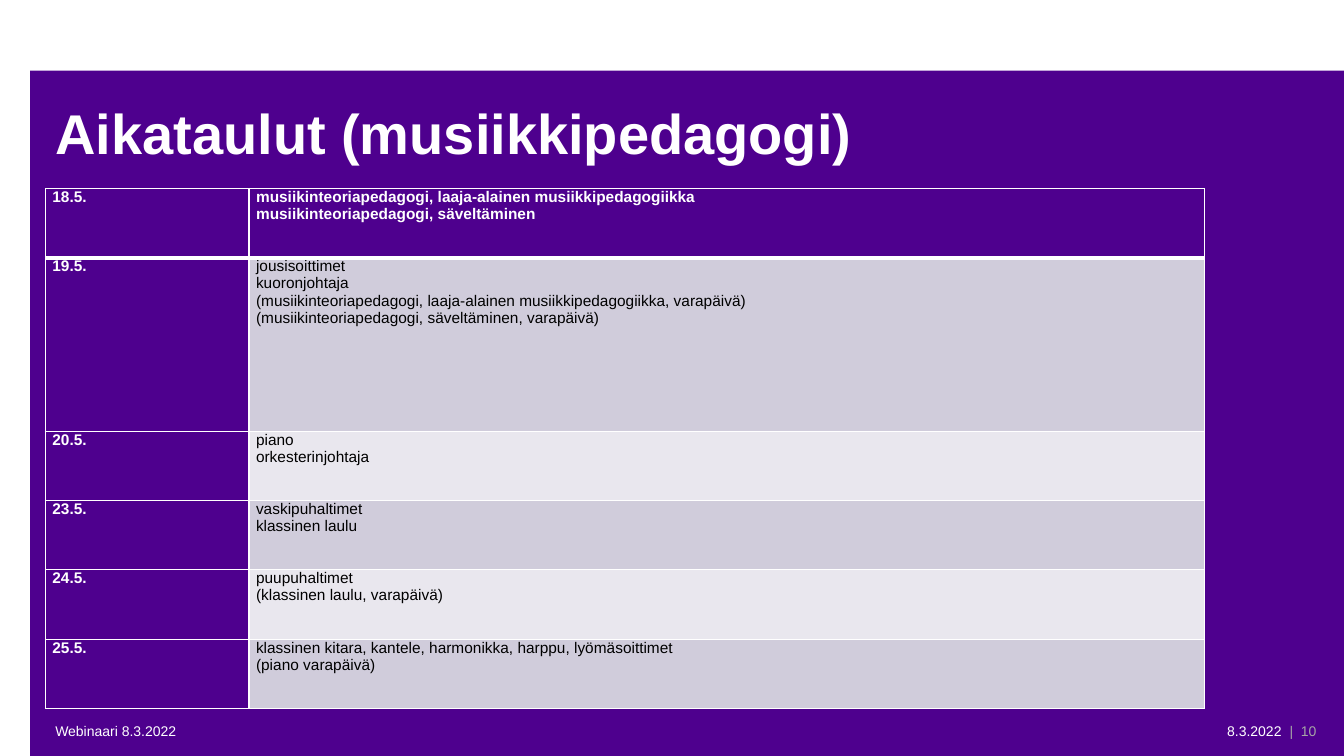
import pptx
import pptx.dml.color
import pptx.enum.shapes
import pptx.enum.text
import pptx.oxml
import pptx.oxml.ns
import pptx.util
from dataclasses import dataclass

# Content
TITLE = "Aikataulut (musiikkipedagogi)"
SCHEDULE = [
    ("18.5.", ["musiikinteoriapedagogi, laaja-alainen musiikkipedagogiikka",
               "musiikinteoriapedagogi, säveltäminen"]),
    ("19.5.", ["jousisoittimet", "kuoronjohtaja",
               "(musiikinteoriapedagogi, laaja-alainen musiikkipedagogiikka, varapäivä)",
               "(musiikinteoriapedagogi, säveltäminen, varapäivä)"]),
    ("20.5.", ["piano", "orkesterinjohtaja"]),
    ("23.5.", ["vaskipuhaltimet", "klassinen laulu"]),
    ("24.5.", ["puupuhaltimet", "(klassinen laulu, varapäivä)"]),
    ("25.5.", ["klassinen kitara, kantele, harmonikka, harppu, lyömäsoittimet",
               "(piano varapäivä)"]),
]
FOOTER, DATE, PAGE = "Webinaari 8.3.2022", "8.3.2022", "|  10"


@dataclass(frozen=True)
class Theme:
    font: str = "Arial"
    purple: str = "4E008E"
    white: str = "FFFFFF"
    black: str = "000000"
    gray: str = "A6A6A6"
    bands: tuple = ("E9E7EE", "D0CCDB")
    title_size: int = 40
    table_size: int = 11
    footer_size: int = 10
    thin_line: int = 1
    header_line: int = 3


THEME = Theme()
ALIGN = pptx.enum.text.PP_ALIGN
ANCHOR = pptx.enum.text.MSO_ANCHOR

# Layout, in inches
WIDTH, HEIGHT = 13.33, 7.5
PANEL_LEFT, PANEL_TOP = 0.3, 0.7
MARGIN, CONTENT_WIDTH = 0.45, 11.5
TABLE_TOP, TABLE_HEIGHT = 1.87, 5.16
DATE_COLUMN = 2.02
ROW_UNITS = [4, 10, 4, 4, 4, 4]
FOOTER_TOP, FOOTER_HEIGHT = 7.1, 0.28


def inches(*values):
    return [pptx.util.Inches(value) for value in values]


def color(value):
    return pptx.dml.color.RGBColor.from_string(value)


def write(frame, lines, size, ink=THEME.white, bold=False, align=ALIGN.LEFT,
          insets=(0.1, 0.05, 0.1, 0.05), line_spacing=None):
    """Fill a text frame with one paragraph per line."""
    (frame.margin_left, frame.margin_top,
     frame.margin_right, frame.margin_bottom) = inches(*insets)
    frame.word_wrap = True
    for index, line in enumerate(lines):
        paragraph = frame.add_paragraph() if index else frame.paragraphs[0]
        paragraph.text = line
        paragraph.alignment = align
        paragraph.line_spacing = line_spacing
        font = paragraph.font
        font.name, font.size, font.bold = THEME.font, pptx.util.Pt(size), bold
        font.color.rgb = color(ink)


def set_borders(cell, top, bottom):
    """Draw the four white cell borders, with widths in points."""
    properties = cell._tc.get_or_add_tcPr()
    widths = {"lnL": THEME.thin_line, "lnR": THEME.thin_line, "lnT": top, "lnB": bottom}
    for index, (side, width) in enumerate(widths.items()):
        properties.insert(index, pptx.oxml.parse_xml(
            f'<a:{side} {pptx.oxml.ns.nsdecls("a")} w="{pptx.util.Pt(width)}">'
            f'<a:solidFill><a:srgbClr val="{THEME.white}"/></a:solidFill></a:{side}>'))


def add_panel(slide):
    panel = slide.shapes.add_shape(
        pptx.enum.shapes.MSO_SHAPE.RECTANGLE,
        *inches(PANEL_LEFT, PANEL_TOP, WIDTH - PANEL_LEFT, HEIGHT - PANEL_TOP))
    panel.shadow.inherit = False
    panel.fill.solid()
    panel.fill.fore_color.rgb = color(THEME.purple)
    panel.line.fill.background()


def add_title(slide):
    title = slide.shapes.title
    slide.shapes._spTree.append(title._element)  # bring in front of the panel
    title.left, title.top, title.width, title.height = inches(MARGIN, 1, CONTENT_WIDTH, 0.71)
    write(title.text_frame, [TITLE], THEME.title_size, bold=True, line_spacing=0.9)
    title.text_frame.auto_size = pptx.enum.text.MSO_AUTO_SIZE.NONE
    title.text_frame.vertical_anchor = ANCHOR.MIDDLE


def add_schedule(slide):
    table = slide.shapes.add_table(
        len(SCHEDULE), 2, *inches(MARGIN, TABLE_TOP, CONTENT_WIDTH, TABLE_HEIGHT)).table
    table.columns[0].width, table.columns[1].width = inches(
        DATE_COLUMN, CONTENT_WIDTH - DATE_COLUMN)
    for row, (date, subjects) in enumerate(SCHEDULE):
        table.rows[row].height = pptx.util.Inches(
            TABLE_HEIGHT * ROW_UNITS[row] / sum(ROW_UNITS))
        for column, lines in enumerate([[date], subjects]):
            cell = table.cell(row, column)
            heading = row == 0 or column == 0
            cell.fill.solid()
            cell.fill.fore_color.rgb = color(THEME.purple if heading else THEME.bands[row % 2])
            set_borders(cell,
                        top=THEME.header_line if row == 1 else THEME.thin_line,
                        bottom=THEME.header_line if row == 0 else THEME.thin_line)
            write(cell.text_frame, lines, THEME.table_size, bold=heading,
                  ink=THEME.white if heading else THEME.black)
            (cell.margin_left, cell.margin_top,
             cell.margin_right, cell.margin_bottom) = inches(0.07, 0, 0.07, 0)


def add_footer(slide, text, left, width, **text_format):
    box = slide.shapes.add_textbox(*inches(left, FOOTER_TOP, width, FOOTER_HEIGHT))
    write(box.text_frame, [text], THEME.footer_size, **text_format)
    box.text_frame.vertical_anchor = ANCHOR.BOTTOM


def main():
    presentation = pptx.Presentation()
    presentation.slide_width, presentation.slide_height = inches(WIDTH, HEIGHT)
    slide = presentation.slides.add_slide(presentation.slide_layouts[5])
    add_panel(slide)
    add_title(slide)
    add_schedule(slide)
    # Footer line
    add_footer(slide, FOOTER, MARGIN, 7.41)
    add_footer(slide, DATE, 11.87, 0.84, align=ALIGN.RIGHT, insets=(0, 0.05, 0, 0.05))
    add_footer(slide, PAGE, 12.79, 0.41, ink=THEME.gray, insets=(0, 0.05, 0.1, 0.05))
    presentation.save("out.pptx")


if __name__ == "__main__":
    main()
